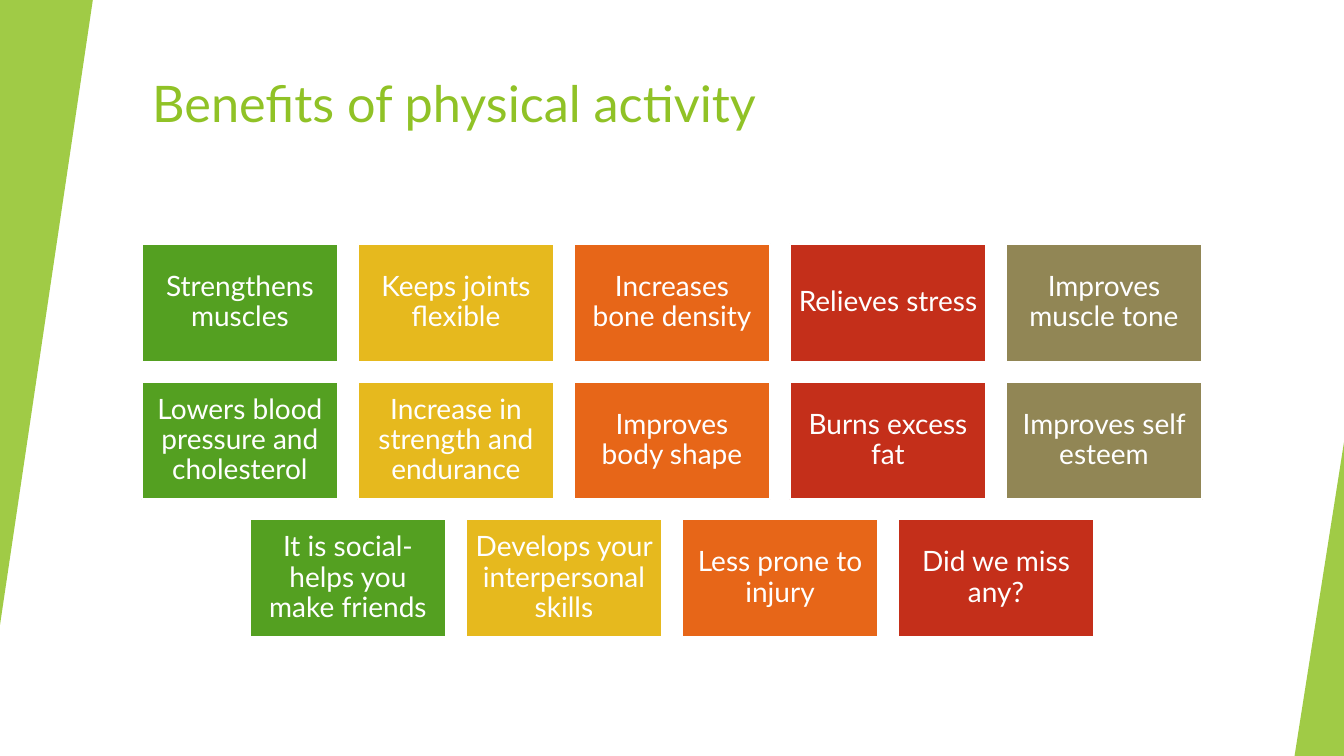
"""Build the slide on the benefits of physical activity."""
from lxml.etree import SubElement
from pptx import Presentation
from pptx.dml.color import RGBColor
from pptx.enum.shapes import MSO_SHAPE
from pptx.enum.text import MSO_ANCHOR, MSO_AUTO_SIZE, PP_ALIGN
from pptx.oxml.ns import qn
from pptx.util import Pt

COLORS = {
    "lime": "90C226",
    "green": "54A021",
    "yellow": "E6B91E",
    "orange": "E76618",
    "red": "C42F1A",
    "olive": "918655",
    "white": "FFFFFF",
}
CARD_COLORS = ["green", "yellow", "orange", "red", "olive"]
BENEFITS = [
    ["Strengthens muscles", "Keeps joints flexible", "Increases bone density",
     "Relieves stress", "Improves muscle tone"],
    ["Lowers blood pressure and cholesterol", "Increase in strength and endurance",
     "Improves body shape", "Burns excess fat", "Improves self esteem"],
    ["It is social- helps you make friends", "Develops your interpersonal skills",
     "Less prone to injury", "Did we miss any?"],
]
SLIDE_WIDTH, SLIDE_HEIGHT = 960, 540
CARD_WIDTH, CARD_HEIGHT = 140.4, 84.2
COLUMN_STEP, ROW_STEP, FIRST_ROW_TOP = 154.3, 98.3, 174.2


def write(frame, text, size, color, align, anchor, inset_x, inset_y, spacing=1.0):
    """Fill a text frame with one formatted paragraph."""
    frame.word_wrap = True
    frame.auto_size = MSO_AUTO_SIZE.NONE
    frame.vertical_anchor = anchor
    frame.margin_left = frame.margin_right = Pt(inset_x)
    frame.margin_top = frame.margin_bottom = Pt(inset_y)
    paragraph = frame.paragraphs[0]
    paragraph.alignment = align
    paragraph.line_spacing = spacing
    run = paragraph.add_run()
    run.text = text
    run.font.name = "Lato"
    run.font.size = Pt(size)
    run.font.color.rgb = RGBColor.from_string(COLORS[color])


presentation = Presentation()
presentation.slide_width = Pt(SLIDE_WIDTH)
presentation.slide_height = Pt(SLIDE_HEIGHT)
slide = presentation.slides.add_slide(presentation.slide_layouts[5])

heading = slide.shapes.title
heading.left, heading.top, heading.width, heading.height = Pt(101.5), Pt(48.2), Pt(802.8), Pt(86.4)
write(heading.text_frame, "Benefits of physical activity", size=36, color="lime",
      align=PP_ALIGN.LEFT, anchor=MSO_ANCHOR.TOP, inset_x=7.2, inset_y=3.6)

for left, top, width, height, rotation in [(0, 0, 66.3, 446.4, 180), (924.7, 316, 35.3, 224, 0)]:
    wedge = slide.shapes.add_shape(
        MSO_SHAPE.ISOSCELES_TRIANGLE, Pt(left), Pt(top), Pt(width), Pt(height))
    wedge.adjustments[0] = 1
    wedge.rotation = rotation
    wedge.shadow.inherit = False
    wedge.line.fill.background()
    wedge.fill.solid()
    wedge.fill.fore_color.rgb = RGBColor.from_string(COLORS["lime"])
    wedge_color = wedge.fill._xPr.find(qn("a:solidFill"))[0]
    SubElement(wedge_color, qn("a:alpha"), val="85000")

for row, benefits in enumerate(BENEFITS):
    row_width = (len(benefits) - 1) * COLUMN_STEP + CARD_WIDTH
    row_left = (SLIDE_WIDTH - row_width) / 2
    for column, (benefit, color) in enumerate(zip(benefits, CARD_COLORS)):
        card = slide.shapes.add_shape(
            MSO_SHAPE.RECTANGLE,
            Pt(row_left + column * COLUMN_STEP), Pt(FIRST_ROW_TOP + row * ROW_STEP),
            Pt(CARD_WIDTH), Pt(CARD_HEIGHT))
        card.shadow.inherit = False
        card.fill.solid()
        card.fill.fore_color.rgb = RGBColor.from_string(COLORS[color])
        card.line.color.rgb = RGBColor.from_string(COLORS["white"])
        card.line.width = Pt(1.5)
        write(card.text_frame, benefit, size=20, color="white", align=PP_ALIGN.CENTER,
              anchor=MSO_ANCHOR.MIDDLE, inset_x=6, inset_y=6, spacing=0.9)

presentation.save("out.pptx")
